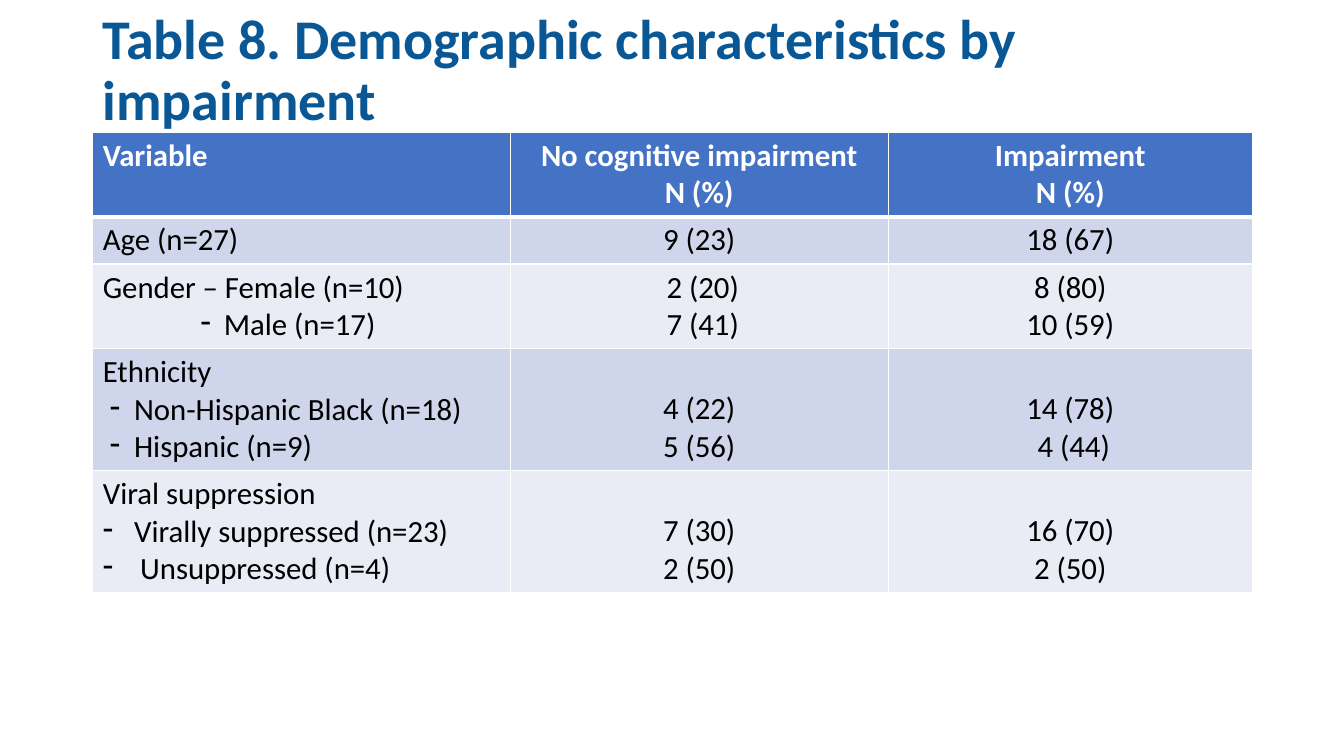
from lxml.etree import SubElement
from pptx import Presentation
from pptx.dml.color import RGBColor
from pptx.enum.text import MSO_ANCHOR, PP_ALIGN
from pptx.oxml import parse_xml
from pptx.oxml.ns import nsdecls, qn
from pptx.util import Inches, Pt

HEAD, DARK, LIGHT = "4472C4", "CFD5EA", "E9EBF5"
WIDTHS = [4.14, 3.75, 3.61]
ROWS = [
    (["Variable"], ["No cognitive impairment", "N (%)"], ["Impairment", "N (%)"]),
    (["Age (n=27)"], ["9 (23)"], ["18 (67)"]),
    (["Gender – Female (n=10)", ("Male (n=17)", 1.2, 0.23)],
     [("2 (20)", 0.07, 0), ("7 (41)", 0.07, 0)], ["8 (80)", "10 (59)"]),
    (["Ethnicity", ("Non-Hispanic Black (n=18)", 0.31, 0.24),
      ("Hispanic (n=9)", 0.31, 0.24)],
     ["4 (22)", "5 (56)"], ["14 (78)", ("4 (44)", 0.07, 0)]),
    (["Viral suppression", ("Virally suppressed (n=23)", 0.31, 0.31),
      ("Unsuppressed (n=4)", 0.37, 0.37)],
     ["7 (30)", "2 (50)"], ["16 (70)", "2 (50)"]),
]


def color(code):
    """Turn a hex string into a colour."""
    return RGBColor.from_string(code)


def style(para, size, code, bold):
    """Format the runs of a paragraph."""
    for run in para.runs:
        font = run.font
        font.name, font.size, font.bold = "Calibri", Pt(size), bold
        font.color.rgb = color(code)


def indent(para, left, hang):
    """Indent a paragraph, with a dash where it hangs."""
    props = para._p.get_or_add_pPr()
    props.set("marL", str(Inches(left)))
    props.set("indent", str(-Inches(hang)))
    if hang:
        SubElement(props, qn("a:buChar")).set("char", "-")


def border(cell, top, bottom):
    """Draw white lines around a cell."""
    props = cell._tc.get_or_add_tcPr()
    sides = zip("LRTB", (1, 1, top, bottom))
    for spot, (side, width) in enumerate(sides):
        props.insert(spot, parse_xml(
            f'<a:ln{side} {nsdecls("a")} w="{Pt(width)}"><a:solidFill>'
            f'<a:srgbClr val="FFFFFF"/></a:solidFill></a:ln{side}>'))


def fill_cell(cell, items, row, col):
    """Write the lines of one table cell and style it."""
    cell.fill.solid()
    cell.fill.fore_color.rgb = color(HEAD if row == 0 else (LIGHT, DARK)[row % 2])
    border(cell, 3 if row == 1 else 1, 3 if row == 0 else 1)
    cell.vertical_anchor = MSO_ANCHOR.BOTTOM if row and col else MSO_ANCHOR.TOP
    frame = cell.text_frame
    for spot, item in enumerate(items):
        para = frame.add_paragraph() if spot else frame.paragraphs[0]
        if isinstance(item, tuple):
            text, left, hang = item
            indent(para, left, hang)
        else:
            text = item
        para.text = text
        para.alignment = PP_ALIGN.CENTER if col else PP_ALIGN.LEFT
        style(para, 22, "000000" if row else "FFFFFF", row == 0)


def add_title(slide, left, top, width, height):
    """Place the slide title in its box."""
    box = slide.shapes.add_textbox(*map(Inches, (left, top, width, height)))
    frame = box.text_frame
    frame.word_wrap = True
    frame.vertical_anchor = MSO_ANCHOR.MIDDLE
    frame.text = "Table 8. Demographic characteristics by impairment"
    para = frame.paragraphs[0]
    para.line_spacing = 0.9
    style(para, 40, "095895", True)


def add_grid(slide, left, top, width):
    """Place the table, each row as high as its longest cell."""
    highs = [0.1 + 0.37 * max(map(len, row)) for row in ROWS]
    box = map(Inches, (left, top, width, sum(highs)))
    table = slide.shapes.add_table(len(ROWS), len(WIDTHS), *box).table
    for col, wide in enumerate(WIDTHS):
        table.columns[col].width = Inches(wide)
    for row, cells in enumerate(ROWS):
        table.rows[row].height = Inches(highs[row])
        for col, items in enumerate(cells):
            fill_cell(table.cell(row, col), items, row, col)


def main():
    """Build the slide and save it."""
    deck = Presentation()
    deck.slide_width, deck.slide_height = Inches(13.33), Inches(7.5)
    slide = deck.slides.add_slide(deck.slide_layouts[6])
    add_title(slide, 0.92, 0.26, 11.5, 0.91)
    add_grid(slide, 0.92, 1.31, 11.5)
    deck.save("out.pptx")


if __name__ == "__main__":
    main()
